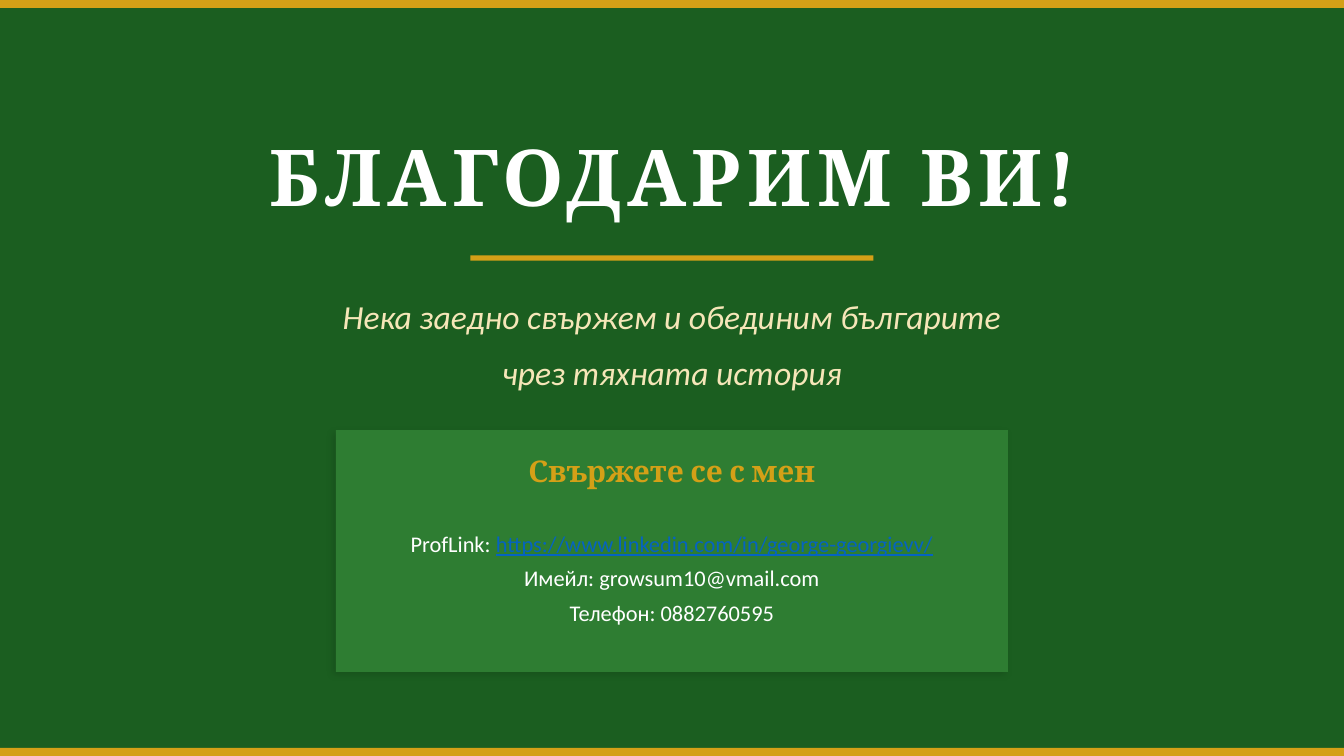
from lxml import etree
from pptx import Presentation
from pptx.dml.color import RGBColor
from pptx.enum.shapes import MSO_SHAPE
from pptx.enum.text import MSO_ANCHOR, MSO_AUTO_SIZE, PP_ALIGN
from pptx.oxml.ns import qn
from pptx.util import Pt

SCALE = 4572  # EMU per px, 200 px to the inch
WIDTH, HEIGHT = 2000, 1125
BAR = 12

RECT = MSO_SHAPE.RECTANGLE
MIDDLE = MSO_ANCHOR.MIDDLE
FIXED = MSO_AUTO_SIZE.NONE
CENTER = PP_ALIGN.CENTER

GREEN = RGBColor(0x1B, 0x5E, 0x20)
LEAF = RGBColor(0x2E, 0x7D, 0x32)
GOLD = RGBColor(0xD4, 0xA0, 0x17)
CREAM = RGBColor(0xF5, 0xE6, 0xB8)
WHITE = RGBColor(0xFF, 0xFF, 0xFF)
BLUE = RGBColor(0x05, 0x63, 0xC1)

HEAD, BODY = "Cambria", "Calibri"


def px(*sizes):
    return [size * SCALE for size in sizes]


def write(shape, lines, size, color, font=BODY, bold=False, italic=False,
          track=0, leading=1.0, after=0, inset=None):
    """Each line is a list of (text, link color or None) runs."""
    frame = shape.text_frame
    frame.word_wrap = True
    frame.auto_size = FIXED
    frame.vertical_anchor = MIDDLE
    if inset is not None:
        frame.margin_left = frame.margin_right = inset
        frame.margin_top = frame.margin_bottom = inset
    for i, line in enumerate(lines):
        para = frame.add_paragraph() if i else frame.paragraphs[0]
        para.alignment = CENTER
        para.line_spacing = leading
        para.space_before = Pt(0)
        para.space_after = Pt(after if i < len(lines) - 1 else 0)
        for text, link in line:
            run = para.add_run()
            run.text = text
            style = run.font
            style.name, style.size = font, Pt(size)
            style.bold, style.italic = bold, italic
            style.underline = link is not None
            style.color.rgb = link or color
            if track:
                run._r.get_or_add_rPr().set("spc", str(track * 100))


class Deck:
    def __init__(self, back):
        self.show = Presentation()
        self.show.slide_width, self.show.slide_height = px(WIDTH, HEIGHT)
        self.slide = self.show.slides.add_slide(self.show.slide_layouts[0])
        fill = self.slide.background.fill
        fill.solid()
        fill.fore_color.rgb = back

    def rect(self, x, y, w, h, color):
        shape = self.slide.shapes.add_shape(RECT, *px(x, y, w, h))
        shape.fill.solid()
        shape.fill.fore_color.rgb = color
        shape.line.fill.background()
        shape.shadow.inherit = False
        return shape

    def card(self, x, y, w, h, color):
        shape = self.rect(x, y, w, h, color)
        effects = shape._element.spPr.find(qn("a:effectLst"))
        shade = etree.SubElement(effects, qn("a:outerShdw"), blurRad="50800",
                                 dist="25400", dir="8100000", rotWithShape="0")
        tint = etree.SubElement(shade, qn("a:srgbClr"), val="000000")
        etree.SubElement(tint, qn("a:alpha"), val="12000")

    def holder(self, index, x, y, w, h, lines, **style):
        shape = self.slide.placeholders[index]
        shape.left, shape.top, shape.width, shape.height = px(x, y, w, h)
        write(shape, lines, **style)

    def text(self, x, y, w, h, lines, **style):
        write(self.slide.shapes.add_textbox(*px(x, y, w, h)), lines, **style)


def main():
    deck = Deck(GREEN)

    # Gold bars along the top and bottom edges
    for top in (0, HEIGHT - BAR):
        deck.rect(0, top, WIDTH, BAR, GOLD)

    # Thanks, rule and motto
    deck.holder(0, 200, 160, 1600, 200, [[("БЛАГОДАРИМ ВИ!", None)]],
                size=42, color=WHITE, font=HEAD, bold=True, track=3)
    deck.rect(700, 380, 600, 8, GOLD)
    motto = ["Нека заедно свържем и обединим българите",
             "чрез тяхната история"]
    deck.holder(1, 300, 420, 1400, 160, [[(line, None)] for line in motto],
                size=18, color=CREAM, italic=True, leading=1.4)

    # Contact card
    deck.card(500, 640, 1000, 360, LEAF)
    deck.text(560, 660, 880, 80, [[("Свържете се с мен", None)]],
              size=16, color=GOLD, font=HEAD, bold=True, inset=0)
    contacts = [
        [("ProfLink: ", None),
         ("https://www.linkedin.com/in/george-georgievv/", BLUE)],
        [("Имейл: growsum10@vmail.com", None)],
        [("Телефон: 0882760595", None)],
    ]
    deck.text(560, 750, 880, 220, contacts, size=12, color=WHITE, after=4)

    deck.show.save("out.pptx")


if __name__ == "__main__":
    main()
